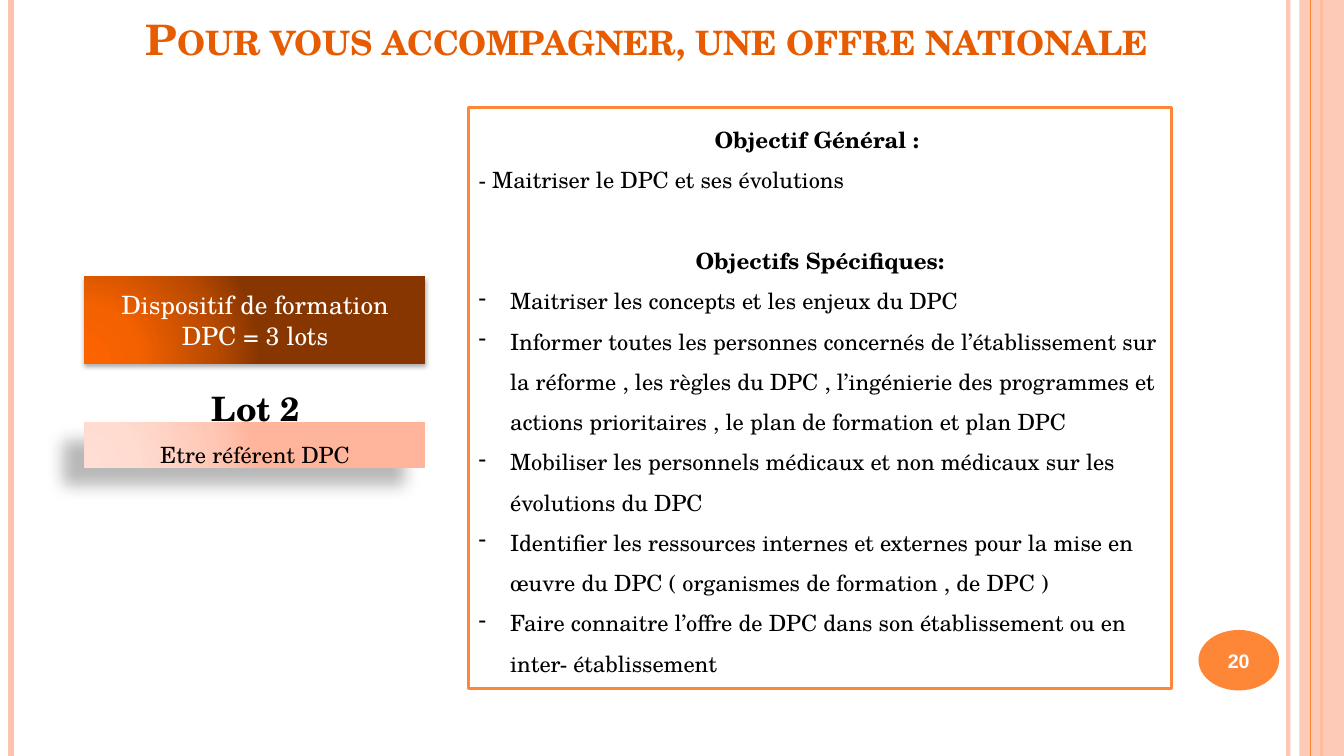
from lxml import etree
from pptx import Presentation
from pptx.dml.color import RGBColor
from pptx.enum.shapes import MSO_CONNECTOR as LINE, MSO_SHAPE as SHAPE
from pptx.enum.text import MSO_ANCHOR as ANCHOR, PP_ALIGN as ALIGN
from pptx.oxml import parse_xml
from pptx.oxml.ns import qn
from pptx.util import Pt

ORANGE = RGBColor(0xFE, 0x86, 0x37)
DARK_ORANGE = RGBColor(0xE7, 0x5C, 0x01)
PINK = RGBColor(0xFE, 0xC3, 0xAE)
BLACK = RGBColor(0, 0, 0)
WHITE = RGBColor(0xFF, 0xFF, 0xFF)
SERIF = "TeX Gyre Schola"
DRAWING = "http://schemas.openxmlformats.org/drawingml/2006/main"


def write(paragraph, text, color=BLACK, **formats):
    run = paragraph.add_run()
    run.text = text
    run.font.color.rgb = color
    for name, value in {"name": SERIF, **formats}.items():
        setattr(run.font, name, value)
    return run


def set_alpha(fill_owner, percent):
    color = next(fill_owner.iter(qn("a:srgbClr")))
    etree.SubElement(color, qn("a:alpha"), val=str(percent * 1000))


prs = Presentation()
prs.slide_width, prs.slide_height = Pt(960), Pt(540)
slide = prs.slides.add_slide(prs.slide_layouts[6])
shapes = slide.shapes

# Side stripes: x, width, weight, colour, opacity; a weight of None is a band
stripes = [
    (920.16, 0, 3, PINK, 93),
    (7.92, 0, 4.5, PINK, 100),
    (943.92, 0, 1.5, ORANGE, 100),
    (928.08, 31.92, None, PINK, 87),
    (936, 0, 0.75, ORANGE, 100),
]
for x, width, weight, color, opacity in stripes:
    if weight is None:
        stripe = shapes.add_shape(SHAPE.RECTANGLE, Pt(x), 0, Pt(width), Pt(540))
        stripe.shadow.inherit = False
        stripe.fill.solid()
        stripe.fill.fore_color.rgb = color
        stripe.line.fill.background()
    else:
        stripe = shapes.add_connector(LINE.STRAIGHT, Pt(x), 0, Pt(x), Pt(540))
        stripe.line.color.rgb = color
        stripe.line.width = Pt(weight)
        etree.SubElement(stripe._element.spPr, qn("a:effectLst"))
    if opacity < 100:
        set_alpha(stripe._element.spPr, opacity)

# Page number
badge = shapes.add_shape(SHAPE.OVAL, Pt(856.08), Pt(450), Pt(57.6), Pt(43.2))
badge.shadow.inherit = False
badge.fill.solid()
badge.fill.fore_color.rgb = ORANGE
badge.line.fill.background()
number = badge.text_frame.paragraphs[0]
number.alignment = ALIGN.CENTER
write(number, "20", WHITE, name="Arial", size=Pt(14), bold=True)

# Title and lot heading: place, text, colour, size, small caps
headings = [
    ((69.84, 7.92, 784.08, 41.04), "Pour vous accompagner, une offre nationale",
     DARK_ORANGE, 30, True),
    ((139.68, 273.6, 85.68, 36), "Lot 2", BLACK, 24, False),
]
for place, text, color, size, small_caps in headings:
    heading = shapes.add_textbox(*map(Pt, place)).text_frame
    heading.word_wrap = True
    heading.vertical_anchor = ANCHOR.BOTTOM if small_caps else ANCHOR.TOP
    heading.paragraphs[0].alignment = ALIGN.CENTER
    run = write(heading.paragraphs[0], text, color, size=Pt(size), bold=True)
    if small_caps:
        run.font._element.set("cap", "small")

# Gradient boxes: top, height, text, colour, size, spacing, anchor, stops, shadow
boxes = [
    (301.68, 32.4, "Etre référent DPC", BLACK, 16, 1.5, ANCHOR.TOP,
     ("FFDED5", "FFDBD0", "FFC8B6", "FFB59B"), (28, 11.8, 19.7, 141)),
    (197.28, 62.64, "Dispositif de formation DPC = 3 lots", WHITE, 18, 1, ANCHOR.MIDDLE,
     ("FD6400", "F46100", "B74900", "873600"), (32, 3.5, 2.2, 90)),
]
for top, height, text, color, size, spacing, anchor, stops, shadow in boxes:
    box = shapes.add_shape(SHAPE.RECTANGLE, Pt(60.48), Pt(top), Pt(243.36), Pt(height))
    box.line.fill.background()
    stop_xml = "".join(
        f'<a:gs pos="{position * 1000}"><a:srgbClr val="{stop}"/></a:gs>'
        for position, stop in zip((0, 30, 75, 100), stops))
    box._element.spPr.find(qn("a:prstGeom")).addnext(parse_xml(
        f'<a:gradFill xmlns:a="{DRAWING}" rotWithShape="1"><a:gsLst>{stop_xml}</a:gsLst>'
        '<a:path path="circle"><a:fillToRect l="5000" t="100000" r="120000" b="10000"/>'
        '</a:path></a:gradFill>'))
    opacity, blur, distance, angle = shadow
    box._element.spPr.append(parse_xml(
        f'<a:effectLst xmlns:a="{DRAWING}"><a:outerShdw blurRad="{Pt(blur)}" '
        f'dist="{Pt(distance)}" dir="{angle * 60000}" algn="ctr" rotWithShape="0">'
        f'<a:srgbClr val="000000"><a:alpha val="{opacity * 1000}"/></a:srgbClr>'
        '</a:outerShdw></a:effectLst>'))
    box.text_frame.word_wrap = True
    box.text_frame.vertical_anchor = anchor
    label = box.text_frame.paragraphs[0]
    label.alignment = ALIGN.CENTER
    label.line_spacing = spacing
    write(label, text, color, size=Pt(size))

# Objectives panel
panel = shapes.add_shape(SHAPE.RECTANGLE, Pt(334.8), Pt(77.04), Pt(501.84), Pt(414.72))
panel.shadow.inherit = False
panel.fill.solid()
panel.fill.fore_color.rgb = WHITE
panel.line.color.rgb = ORANGE
panel.line.width = Pt(2)
objectives = panel.text_frame
objectives.word_wrap = True
objectives.vertical_anchor = ANCHOR.TOP
lines = [
    ("heading", "Objectif Général : "),
    ("plain", "- Maitriser le DPC et ses évolutions"),
    ("heading", "Objectifs Spécifiques:"),
    ("bullet", "Maitriser les concepts et les enjeux du DPC"),
    ("bullet", "Informer toutes les personnes concernés de l’établissement sur la réforme , "
     "les règles du DPC , l’ingénierie des programmes et actions prioritaires , "
     "le plan de formation et plan DPC"),
    ("bullet", "Mobiliser les personnels médicaux et non médicaux sur les évolutions du DPC"),
    ("bullet", "Identifier les ressources internes et externes pour la mise en œuvre du DPC "
     "( organismes de formation , de DPC )"),
    ("bullet", "Faire connaitre l’offre de DPC dans son établissement ou en "
     "inter- établissement"),
]
for index, (role, text) in enumerate(lines):
    line = objectives.add_paragraph() if index else objectives.paragraphs[0]
    line.alignment = ALIGN.CENTER if role == "heading" else ALIGN.LEFT
    line.line_spacing = 1.5
    if role == "heading" and index:
        line.space_before = Pt(28.8)
    if role == "bullet":
        properties = line._p.get_or_add_pPr()
        properties.set("marL", str(Pt(22.5)))
        properties.set("indent", str(-Pt(22.5)))
        etree.SubElement(properties, qn("a:buChar"), char="-")
    write(line, text, size=Pt(16), bold=role == "heading")

prs.save("out.pptx")
